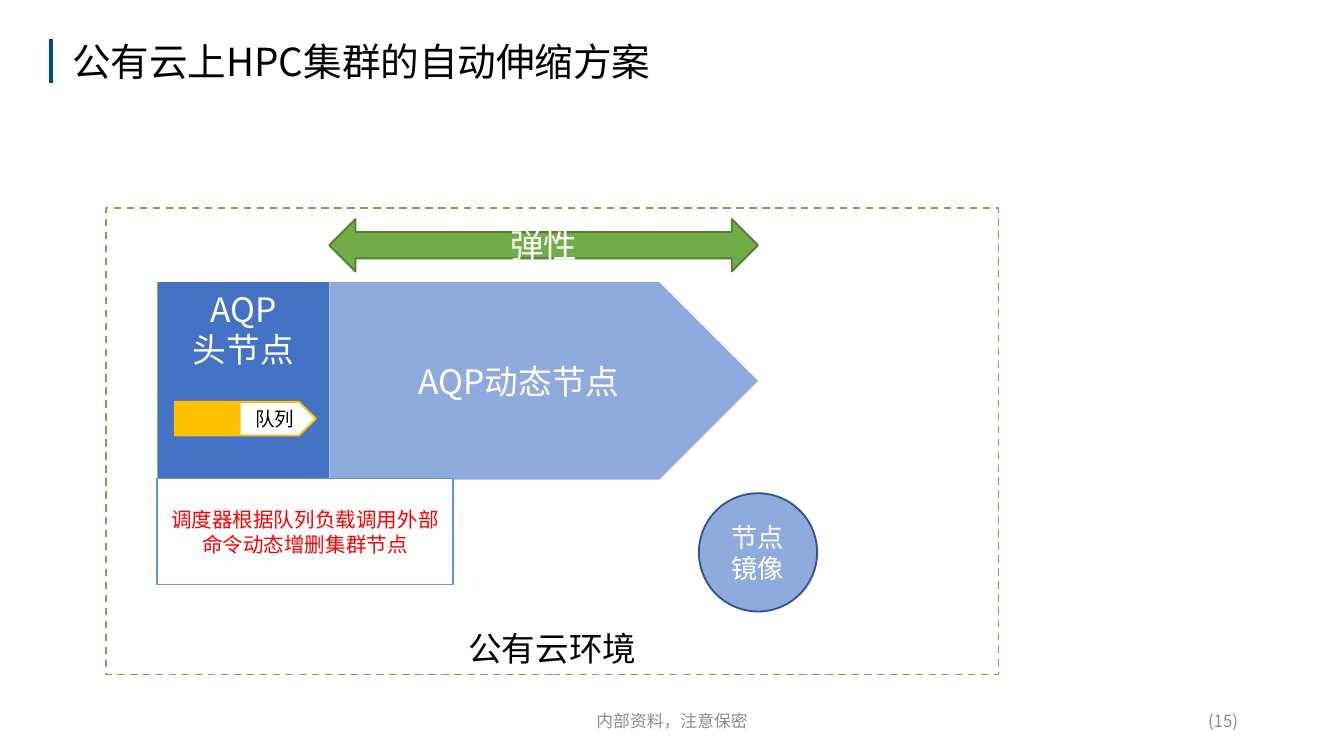
from lxml.etree import SubElement
from pptx import Presentation
from pptx.dml.color import RGBColor
from pptx.enum.dml import MSO_LINE
from pptx.enum.shapes import MSO_CONNECTOR, MSO_SHAPE
from pptx.enum.text import MSO_ANCHOR, PP_ALIGN
from pptx.oxml.ns import qn
from pptx.util import Inches, Pt

SLIDE_WIDTH = 10
SLIDE_HEIGHT = SLIDE_WIDTH * 9 / 16

FONT = "Noto Sans CJK SC"
BLACK = RGBColor(0x00, 0x00, 0x00)
WHITE = RGBColor(0xFF, 0xFF, 0xFF)
GREY = RGBColor(0x8C, 0x8C, 0x8C)
RED = RGBColor(0xFF, 0x00, 0x00)
TEAL = RGBColor(0x00, 0x50, 0x7A)
BLUE = RGBColor(0x44, 0x72, 0xC4)
LIGHT_BLUE = RGBColor(0x8F, 0xAA, 0xDC)
DARK_BLUE = RGBColor(0x32, 0x54, 0x91)
SKY_BLUE = RGBColor(0x5B, 0x9B, 0xD5)
AMBER = RGBColor(0xFF, 0xC0, 0x00)
GREEN = RGBColor(0x70, 0xAD, 0x47)
DARK_GREEN = RGBColor(0x53, 0x80, 0x35)


def write(shape, text, size=18, color=WHITE, align=PP_ALIGN.CENTER,
          anchor=MSO_ANCHOR.MIDDLE, line_spacing=None):
    """Fill a shape with text, one paragraph per line."""
    frame = shape.text_frame
    frame.word_wrap = True
    frame.vertical_anchor = anchor
    for index, line in enumerate(text.split("\n")):
        paragraph = frame.add_paragraph() if index else frame.paragraphs[0]
        paragraph.alignment = align
        if line_spacing:
            paragraph.line_spacing = line_spacing
        run = paragraph.add_run()
        run.text = line
        run.font.name = FONT
        run.font.size = Pt(size)
        run.font.color.rgb = color
        SubElement(run.font._element, qn("a:ea"), typeface=FONT)


def add_text(slide, left, top, width, height, text, **text_format):
    box = slide.shapes.add_textbox(Inches(left), Inches(top), Inches(width), Inches(height))
    write(box, text, **text_format)


def add_block(slide, kind, left, top, width, height, fill=None, line=None):
    block = slide.shapes.add_shape(
        kind, Inches(left), Inches(top), Inches(width), Inches(height))
    block.shadow.inherit = False
    if fill is None:
        block.fill.background()
    else:
        block.fill.solid()
        block.fill.fore_color.rgb = fill
    if line is None:
        block.line.fill.background()
    else:
        block.line.color.rgb = line
        block.line.width = Pt(1)
    return block


def add_heading(slide, left, top, height):
    bar = slide.shapes.add_connector(
        MSO_CONNECTOR.STRAIGHT, Inches(left), Inches(top), Inches(left), Inches(top + height))
    bar.line.color.rgb = TEAL
    bar.line.width = Pt(2.25)
    SubElement(bar._element.spPr, qn("a:effectLst"))
    add_text(slide, left + 0.06, top - 0.04, 4.9, 0.45, "公有云上HPC集群的自动伸缩方案",
             size=20.7, color=BLACK, align=PP_ALIGN.LEFT, line_spacing=0.9)


def add_footer(slide, top, height):
    add_text(slide, 3.31, top, 3.38, height, "内部资料，注意保密", size=9, color=GREY)
    add_text(slide, 7.06, top, 2.25, height, "(15)", size=9, color=GREY, align=PP_ALIGN.RIGHT)


def add_queue(slide, left, top, width, height):
    queue = add_block(slide, MSO_SHAPE.PENTAGON, left, top, width, height, WHITE, AMBER)
    write(queue, "队列", size=10.5, color=BLACK, align=PP_ALIGN.RIGHT)
    add_block(slide, MSO_SHAPE.RECTANGLE, left, top, 0.49, height, AMBER)


def add_cluster(slide, left, top, head_width, dynamic_width, height):
    """Head node with its queue and scheduler note, beside the elastic nodes."""
    head = add_block(slide, MSO_SHAPE.RECTANGLE, left, top, head_width, height, BLUE)
    write(head, "AQP\n头节点", anchor=MSO_ANCHOR.TOP)
    add_queue(slide, left + 0.13, top + 0.89, 1.05, 0.25)

    dynamic_left = left + head_width
    dynamic = add_block(slide, MSO_SHAPE.PENTAGON, dynamic_left, top,
                        dynamic_width, height, LIGHT_BLUE)
    write(dynamic, "AQP动态节点")
    elasticity = add_block(slide, MSO_SHAPE.LEFT_RIGHT_ARROW, dynamic_left, top - 0.47,
                           dynamic_width, 0.39, GREEN, DARK_GREEN)
    write(elasticity, "弹性")

    scheduler = add_block(slide, MSO_SHAPE.RECTANGLE, left, top + height - 0.01,
                          2.2, 0.79, WHITE, SKY_BLUE)
    write(scheduler, "调度器根据队列负载调用外部命令动态增删集群节点", size=11, color=RED)


def add_cloud(slide, left, top, width, height):
    cloud = add_block(slide, MSO_SHAPE.RECTANGLE, left, top, width, height, line=GREEN)
    cloud.line.dash_style = MSO_LINE.DASH
    write(cloud, "公有云环境", color=BLACK, anchor=MSO_ANCHOR.BOTTOM)
    add_cluster(slide, left + 0.38, top + 0.55, 1.28, 3.19, 1.47)
    node_image = add_block(slide, MSO_SHAPE.OVAL, left + 4.41, top + 2.12,
                           0.88, 0.88, LIGHT_BLUE, DARK_BLUE)
    write(node_image, "节点镜像", size=14)


def main():
    deck = Presentation()
    deck.slide_width = Inches(SLIDE_WIDTH)
    deck.slide_height = Inches(SLIDE_HEIGHT)
    slide = deck.slides.add_slide(deck.slide_layouts[6])
    add_heading(slide, 0.38, 0.29, 0.33)
    add_cloud(slide, 0.79, 1.55, 6.64, 3.47)
    add_footer(slide, 5.21, 0.3)
    deck.save("out.pptx")


if __name__ == "__main__":
    main()
